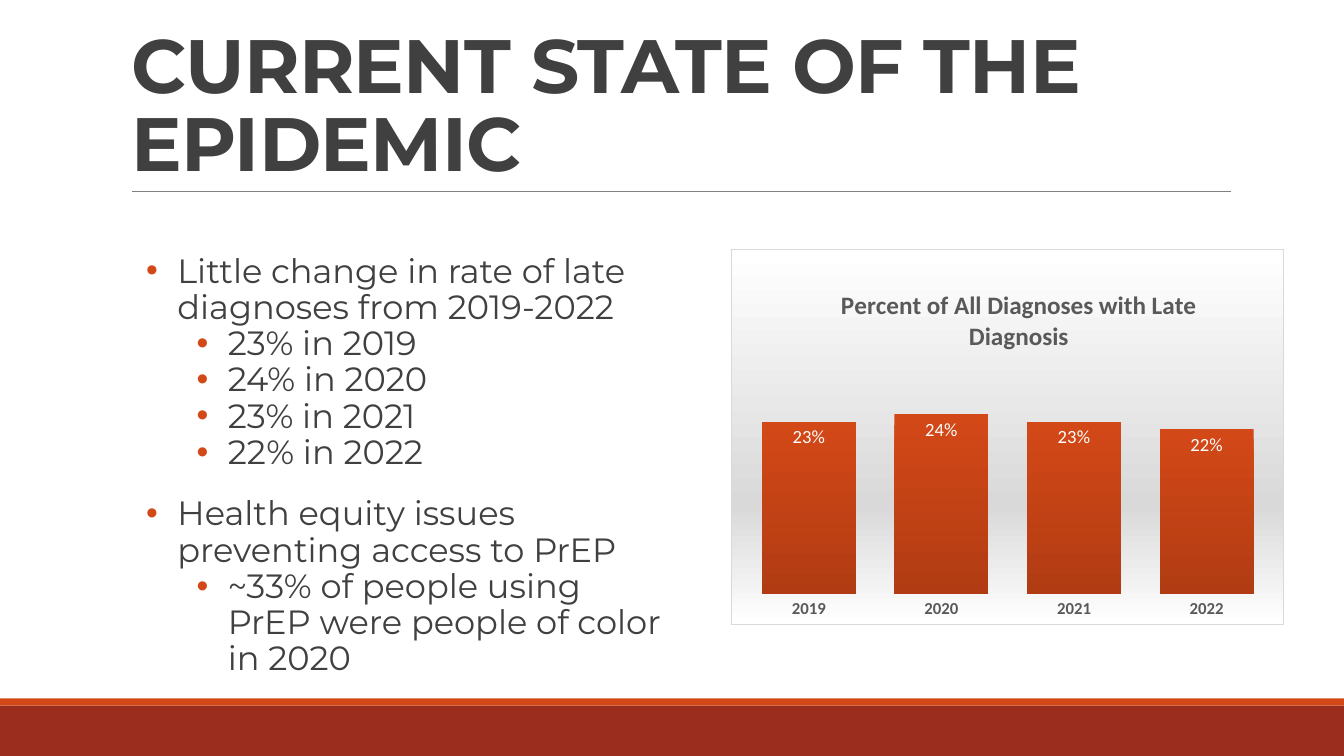
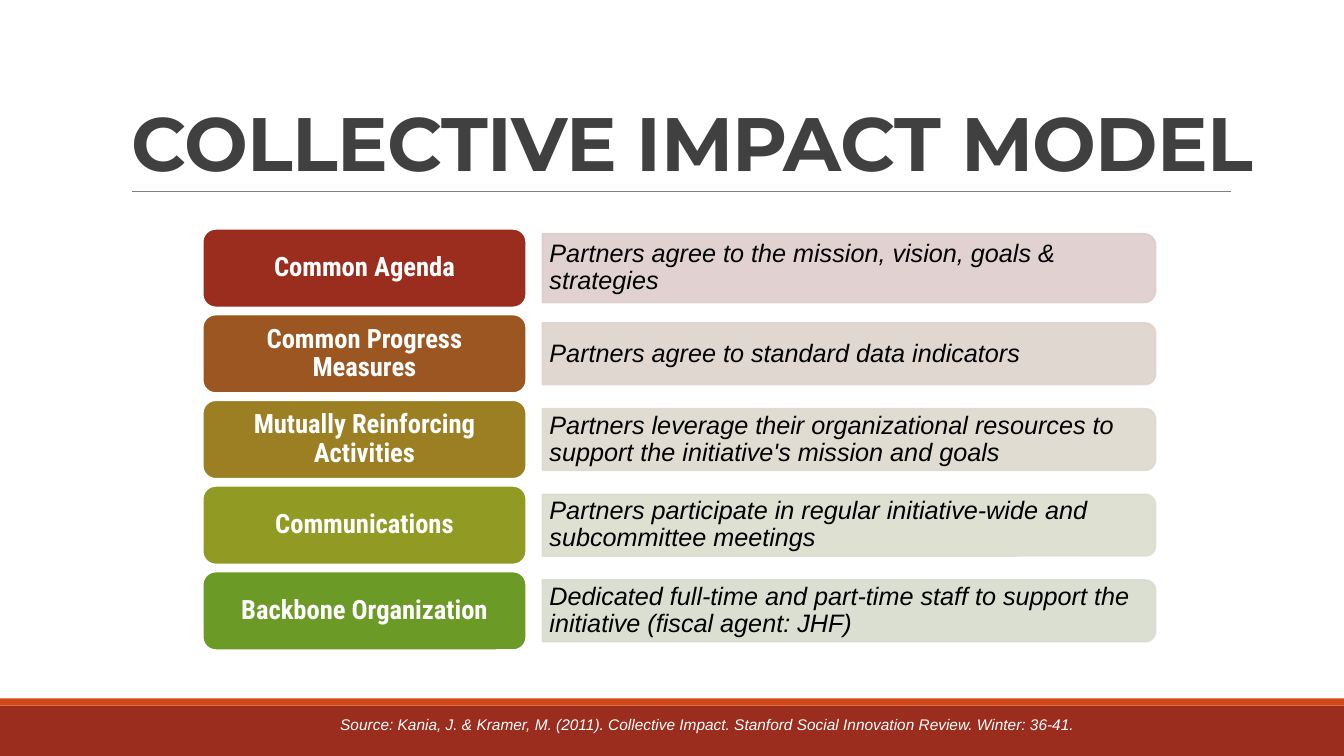
from dataclasses import dataclass

from lxml import etree
from pptx import Presentation, util as u
from pptx.chart.data import CategoryChartData
from pptx.dml.color import RGBColor
from pptx.enum import chart as charts, shapes, text
from pptx.oxml import parse_xml
from pptx.oxml.ns import nsdecls, qn

ALIGN = text.PP_ALIGN
ANCHOR = text.MSO_ANCHOR
SHAPE = shapes.MSO_SHAPE


@dataclass(frozen=True)
class Theme:
    ink: str = "404040"
    black: str = "000000"
    white: str = "FFFFFF"
    rust: str = "9B2D1F"
    orange: str = "D34817"
    ember: str = "B13C13"
    rule: str = "808080"
    label: str = "595959"
    mist: str = "D9D9D9"
    head: str = "Montserrat"
    pill: str = "Roboto Condensed"
    note: str = "Arial"
    chart: str = "Calibri"
    title_size: float = 54
    list_size: float = 24
    pill_size: float = 19
    bar_size: float = 18
    note_size: float = 11
    chart_title: float = 18
    value_size: float = 13.3
    axis_size: float = 12


def rgb(color):
    return RGBColor.from_string(color)


class Deck:
    """Hold the theme and the current slide, and draw each kind of element."""

    def __init__(self, theme):
        self.theme = theme
        self.deck = Presentation()
        self.deck.slide_width = u.Inches(13.33)
        self.deck.slide_height = u.Inches(7.5)

    def start(self, title, width, layout):
        self.slide = self.deck.slides.add_slide(self.deck.slide_layouts[layout])
        t = self.theme
        self.shape(SHAPE.RECTANGLE, (0, 7, 13.33, 0.5), t.rust)
        self.shape(SHAPE.RECTANGLE, (0, 6.93, 13.33, 0.07), t.orange)
        self.line((1.31, 1.9), (12.21, 1.9))
        holder = self.slide.shapes.title
        self.place(holder, (1.2, 0.31, width, 1.59))
        para = self.label(holder, title, t.head, t.title_size, t.ink,
                          anchor=ANCHOR.BOTTOM, bold=True, spacing=0.85)
        para._p.pPr.find(qn("a:defRPr")).set("spc", "-50")

    def place(self, item, box):
        item.left, item.top, item.width, item.height = map(u.Inches, box)

    def style(self, font, name, size, color, bold=False, italic=False):
        font.name, font.size = name, u.Pt(size)
        font.bold, font.italic = bold, italic
        font.color.rgb = rgb(color)

    def label(self, item, words, name, size, color, align=ALIGN.LEFT,
              anchor=ANCHOR.MIDDLE, inset=(0.1, 0.05), bold=False,
              italic=False, spacing=0.9):
        frame = item.text_frame
        frame.word_wrap = True
        frame.auto_size = text.MSO_AUTO_SIZE.NONE
        frame.vertical_anchor = anchor
        frame.margin_left = frame.margin_right = u.Inches(inset[0])
        frame.margin_top = frame.margin_bottom = u.Inches(inset[1])
        para = frame.paragraphs[0]
        para.text = words
        para.alignment = align
        para.line_spacing = spacing
        self.style(para.font, name, size, color, bold, italic)
        return para

    def shape(self, kind, box, fill, edge=None, alpha=None, turn=0):
        item = self.slide.shapes.add_shape(kind, *map(u.Inches, box))
        item.shadow.inherit = False
        item.rotation = turn
        item.fill.solid()
        item.fill.fore_color.rgb = rgb(fill)
        if edge:
            item.line.color.rgb = rgb(edge)
            item.line.width = u.Pt(1.25)
        else:
            item.line.fill.background()
        if alpha:
            for tint in item._element.spPr.iter(qn("a:srgbClr")):
                etree.SubElement(tint, qn("a:alpha"), val=str(alpha * 1000))
        return item

    def line(self, start, end):
        item = self.slide.shapes.add_connector(
            shapes.MSO_CONNECTOR.STRAIGHT, *map(u.Inches, start + end))
        item.line.color.rgb = rgb(self.theme.rule)
        item.line.width = u.Pt(0.5)
        etree.SubElement(item._element.spPr, qn("a:effectLst"))

    def textbox(self, box, words, **look):
        item = self.slide.shapes.add_textbox(*map(u.Inches, box))
        self.label(item, words, **look)

    def bullets(self, box, rows):
        t = self.theme
        holder = self.slide.placeholders[1]
        self.place(holder, box)
        frame = holder.text_frame
        frame.auto_size = text.MSO_AUTO_SIZE.NONE
        for i, (level, words, after) in enumerate(rows):
            para = frame.add_paragraph() if i else frame.paragraphs[0]
            para.text = words
            para.level = level
            props = para._p.get_or_add_pPr()
            props.set("marL", str(u.Inches(0.31 + level * 0.5)))
            props.set("indent", str(u.Inches(-0.31)))
            tint = etree.SubElement(props, qn("a:buClr"))
            etree.SubElement(tint, qn("a:srgbClr"), val=t.orange)
            etree.SubElement(props, qn("a:buFont"), typeface=t.note)
            etree.SubElement(props, qn("a:buChar"), char="•")
            para.line_spacing = 0.9
            para.space_before = u.Pt(0)
            para.space_after = u.Pt(after)
            self.style(para.font, t.head, t.list_size, t.ink)

    def columns(self, box, title, cats, vals):
        t = self.theme
        data = CategoryChartData(number_format='0"%"')
        data.categories = cats
        data.add_series("Series 1", vals)
        chart = self.slide.shapes.add_chart(
            charts.XL_CHART_TYPE.COLUMN_CLUSTERED,
            *map(u.Inches, box), data).chart
        self.style(chart.font, t.chart, 10, t.black)
        chart.has_legend = False
        chart.has_title = True
        head = chart.chart_title.text_frame.paragraphs[0]
        head.text = title
        self.style(head.font, t.chart, t.chart_title, t.label, bold=True)

        axis = chart.category_axis
        axis.major_tick_mark = charts.XL_TICK_MARK.NONE
        axis.format.line.fill.background()
        self.style(axis.tick_labels.font, t.chart, t.axis_size, t.label, bold=True)
        scale = chart.value_axis
        scale.visible = False
        scale.has_major_gridlines = False
        scale.minimum_scale, scale.maximum_scale = 0, 33

        plot = chart.plots[0]
        plot.gap_width = 41
        plot.vary_by_categories = False
        fill = plot.series[0].format.fill
        fill.gradient()
        fill.gradient_angle = 270
        for stop, color, place in zip(fill.gradient_stops, (t.orange, t.ember), (0, 1)):
            stop.color.rgb = rgb(color)
            stop.position = place
        plot.has_data_labels = True
        labels = plot.data_labels
        labels.show_value = True
        labels.number_format = '0"%"'
        labels.number_format_is_linked = False
        labels.position = charts.XL_LABEL_POSITION.INSIDE_END
        self.style(labels.font, t.chart, t.value_size, t.white)
        self.backdrop(chart)
        self.arrange(chart)

    def backdrop(self, chart):
        t = self.theme
        stops = "".join(
            f'<a:gs pos="{place * 1000}"><a:srgbClr val="{color}"/></a:gs>'
            for place, color in ((0, t.white), (68, t.mist), (100, t.white)))
        chart._chartSpace.chart.addnext(parse_xml(
            f'<c:spPr {nsdecls("c", "a")}><a:gradFill><a:gsLst>{stops}</a:gsLst>'
            f'<a:lin ang="5400000" scaled="0"/></a:gradFill><a:ln w="9525">'
            f'<a:solidFill><a:srgbClr val="{t.mist}"/></a:solidFill></a:ln></c:spPr>'))

    def arrange(self, chart):
        title = chart.chart_title._element
        area = chart._chartSpace.chart.plotArea
        for part, inner, spots in (
                (title, "", {"x": 0.19, "y": 0.09}),
                (area, '<c:layoutTarget val="inner"/>',
                 {"x": 0.02, "y": 0.26, "w": 0.96, "h": 0.66})):
            for old in part.findall(qn("c:layout")):
                part.remove(old)
            modes = "".join(f'<c:{key}Mode val="edge"/>' for key in "xy")
            sizes = "".join(f'<c:{key} val="{val}"/>' for key, val in spots.items())
            layout = parse_xml(
                f'<c:layout {nsdecls("c")}><c:manualLayout>{inner}{modes}{sizes}'
                f'</c:manualLayout></c:layout>')
            words = part.find(qn("c:tx"))
            if words is None:
                part.insert(0, layout)
            else:
                words.addnext(layout)

    def pair(self, mid, tall, name, words, dark, pale):
        t = self.theme
        pill = self.shape(SHAPE.ROUNDED_RECTANGLE, (2.01, mid - 0.39, 3.21, 0.78),
                          dark, edge=t.white)
        self.label(pill, name, t.pill, t.pill_size, t.white,
                   align=ALIGN.CENTER, inset=(0.13, 0.08), bold=True)
        left, wide = 5.38, 6.08
        self.shape(SHAPE.ROUND_2_SAME_RECTANGLE,
                   (left + (wide - tall) / 2, mid - wide / 2, tall, wide),
                   pale, edge=pale, alpha=90, turn=90)
        self.textbox((left, mid - tall / 2, 6.04, tall), words, name=t.note,
                     size=t.bar_size, color=t.black, italic=True, inset=(0.07, 0.04))


def main():
    theme = Theme()
    deck = Deck(theme)

    deck.start("CURRENT STATE OF THE EPIDEMIC", 11, layout=1)
    deck.bullets((1.35, 2.47, 5.32, 4.4), (
        (0, "Little change in rate of late diagnoses from 2019-2022", 0),
        (1, "23% in 2019", 0),
        (1, "24% in 2020", 0),
        (1, "23% in 2021", 0),
        (1, "22% in 2022", 18),
        (0, "Health equity issues preventing access to PrEP", 0),
        (1, "~33% of people using PrEP were people of color in 2020", 0),
    ))
    deck.columns((7.25, 2.47, 5.49, 3.73),
                 "Percent of All Diagnoses with Late Diagnosis",
                 ("2019", "2020", "2021", "2022"), (23, 24, 23, 22))

    deck.start("COLLECTIVE IMPACT MODEL", 11.57, layout=5)
    rows = (
        ("Common Agenda", "Partners agree to the mission, vision, goals & strategies",
         theme.rust, "DECDCD"),
        ("Common Progress Measures", "Partners agree to standard data indicators",
         "9B5621", "DED3CD"),
        ("Mutually Reinforcing Activities",
         "Partners leverage their organizational resources to support "
         "the initiative's mission and goals", "9B7F22", "DDD9CE"),
        ("Communications",
         "Partners participate in regular initiative-wide and subcommittee meetings",
         "919B24", "DBDDCE"),
        ("Backbone Organization",
         "Dedicated full-time and part-time staff to support the initiative "
         "(fiscal agent: JHF)", "6B9B26", "D6DCCE"),
    )
    for i, row in enumerate(rows):
        deck.pair(2.66 + i * 0.85, 0.61 if i else 0.68, *row)
    deck.textbox((2.02, 7.04, 10, 0.29),
                 "Source: Kania, J. & Kramer, M. (2011). Collective Impact. "
                 "Stanford Social Innovation Review. Winter: 36-41.",
                 name=theme.note, size=theme.note_size, color=theme.white,
                 align=ALIGN.CENTER, italic=True, spacing=1.0)
    deck.deck.save("out.pptx")


if __name__ == "__main__":
    main()
